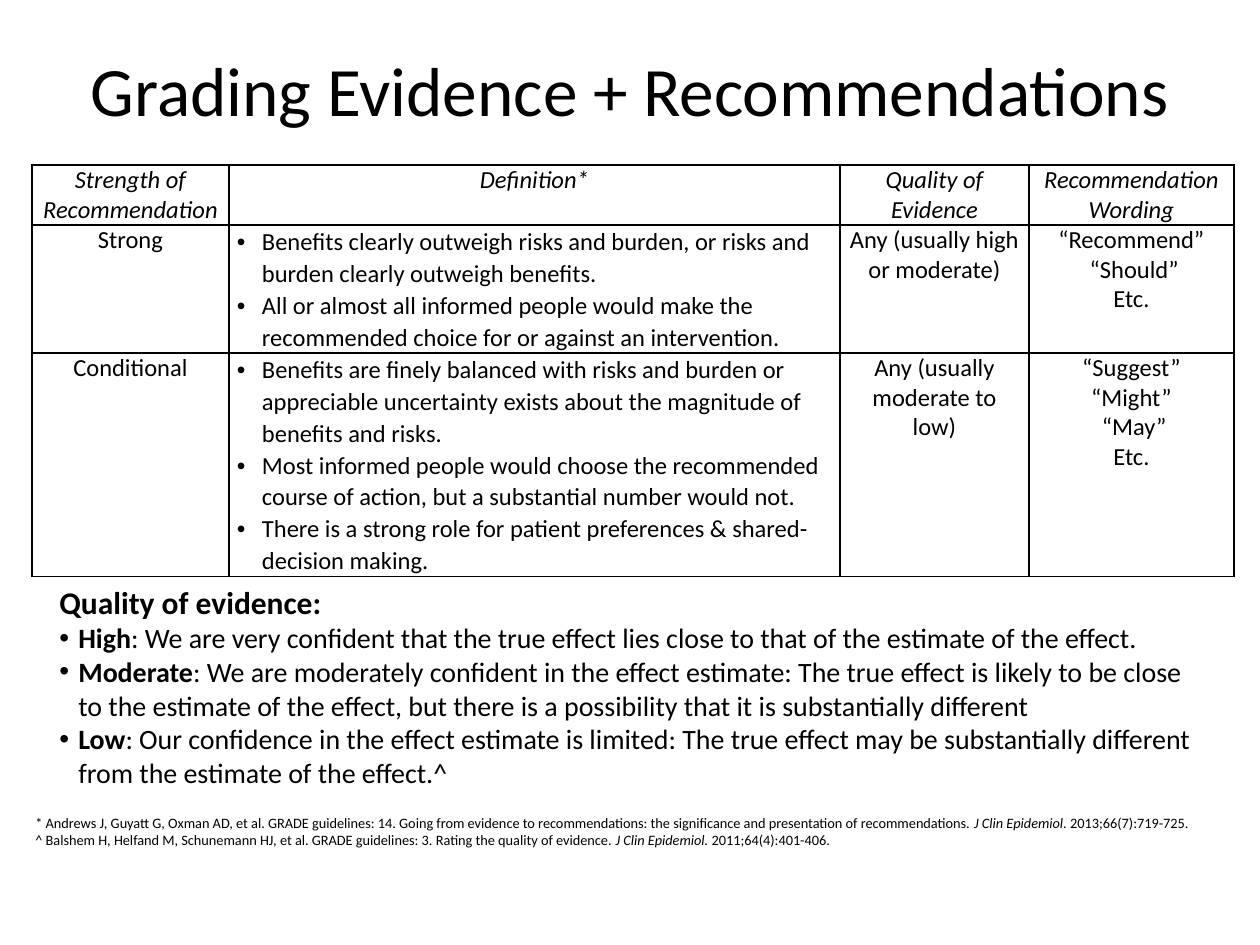
from pptx import Presentation
from pptx.dml.color import RGBColor
from pptx.enum.text import MSO_ANCHOR, MSO_AUTO_SIZE, PP_ALIGN
from pptx.oxml import parse_xml
from pptx.oxml.ns import nsdecls
from pptx.util import Emu, Pt

COLORS = {"text": "000000", "border": "000000", "page": "FFFFFF"}
FONT = "Calibri"
PX_PER_INCH = 126


def px(length):
    return Emu(round(length * 914400 / PX_PER_INCH))


class SlideBuilder:
    def __init__(self, deck):
        self.page = deck.slides.add_slide(deck.slide_layouts[5])
        fill = self.page.background.fill
        fill.solid()
        fill.fore_color.rgb = RGBColor.from_string(COLORS["page"])

    def style(self, span, size, mark=""):
        font = span.font
        font.name, font.size = FONT, Pt(size)
        font.bold, font.italic = mark == "b", mark == "i"
        font.color.rgb = RGBColor.from_string(COLORS["text"])

    def bullet(self, para, indent):
        properties = para._p.get_or_add_pPr()
        properties.set("marL", str(px(indent)))
        properties.set("indent", str(-px(indent)))
        properties.append(parse_xml(f'<a:buFont {nsdecls("a")} typeface="Arial"/>'))
        properties.append(parse_xml(f'<a:buChar {nsdecls("a")} char="•"/>'))

    def title(self, text, left, top, width, height):
        box = self.page.shapes.title
        box.left, box.top, box.width, box.height = map(px, (left, top, width, height))
        frame = box.text_frame
        frame.text = text
        frame.auto_size = MSO_AUTO_SIZE.NONE
        frame.vertical_anchor = MSO_ANCHOR.TOP
        frame.margin_top = px(9)
        para = frame.paragraphs[0]
        para.alignment = PP_ALIGN.CENTER
        self.style(para.runs[0], 39.6)

    def text(self, paragraphs, left, top, width, height):
        """Each paragraph is (size, bullet indent, [(text, mark), ...])."""
        box = self.page.shapes.add_textbox(*map(px, (left, top, width, height)))
        frame = box.text_frame
        frame.word_wrap = True
        frame.auto_size = MSO_AUTO_SIZE.SHAPE_TO_FIT_TEXT
        for index, (size, indent, spans) in enumerate(paragraphs):
            para = frame.add_paragraph() if index else frame.paragraphs[0]
            if indent:
                self.bullet(para, indent)
            for words, mark in spans:
                span = para.add_run()
                span.text = words
                self.style(span, size, mark)

    def borders(self, cell):
        properties = cell._tc.get_or_add_tcPr()
        for index, side in enumerate(("lnL", "lnR", "lnT", "lnB")):
            properties.insert(index, parse_xml(
                f'<a:{side} {nsdecls("a")} w="{Pt(1)}"><a:solidFill>'
                f'<a:srgbClr val="{COLORS["border"]}"/></a:solidFill></a:{side}>'))

    def cell(self, cell, lines, mark="", bulleted=False):
        cell.fill.background()
        cell.margin_left = cell.margin_right = px(8)
        cell.margin_top = cell.margin_bottom = 0
        cell.text_frame.text = "\n".join(lines)
        for para in cell.text_frame.paragraphs:
            if bulleted:
                para.line_spacing = 1.07
                self.bullet(para, 25)
            else:
                para.alignment = PP_ALIGN.CENTER
            self.style(para.runs[0], 14, mark)
        self.borders(cell)

    def table(self, rows, left, top, widths, heights, bullet_column):
        frame = self.page.shapes.add_table(
            len(rows), len(widths), *map(px, (left, top, sum(widths), sum(heights))))
        table = frame.table
        table.horz_banding = table.first_row = False
        for column, width in zip(table.columns, widths):
            column.width = px(width)
        for row, height in zip(table.rows, heights):
            row.height = px(height)
        for r, row in enumerate(rows):
            for c, lines in enumerate(row):
                self.cell(table.cell(r, c), lines, "" if r else "i",
                          r > 0 and c == bullet_column)


TABLE_ROWS = [
    [["Strength of Recommendation"], ["Definition*"],
     ["Quality of Evidence"], ["Recommendation Wording"]],
    [["Strong"],
     ["Benefits clearly outweigh risks and burden, or risks and burden clearly "
      "outweigh benefits.",
      "All or almost all informed people would make the recommended choice for or "
      "against an intervention."],
     ["Any (usually high or moderate)"],
     ["“Recommend”", " “Should”", "Etc."]],
    [["Conditional"],
     ["Benefits are finely balanced with risks and burden or appreciable uncertainty "
      "exists about the magnitude of benefits and risks.",
      "Most informed people would choose the recommended course of action, but a "
      "substantial number would not.",
      "There is a strong role for patient preferences & shared-decision making."],
     ["Any (usually moderate to low)"],
     ["“Suggest”", "“Might”", " “May”", "Etc."]],
]

QUALITY_LEVELS = [
    ("High", ": We are very confident that the true effect lies close to that of the "
     "estimate of the effect."),
    ("Moderate", ": We are moderately confident in the effect estimate: The true effect "
     "is likely to be close to the estimate of the effect, but there is a possibility "
     "that it is substantially different"),
    ("Low", ": Our confidence in the effect estimate is limited: The true effect may be "
     "substantially different from the estimate of the effect.^"),
]

REFERENCES = [
    ("* Andrews J, Guyatt G, Oxman AD, et al. GRADE guidelines: 14. Going from evidence "
     "to recommendations: the significance and presentation of recommendations. ",
     "2013;66(7):719-725."),
    ("^ Balshem H, Helfand M, Schunemann HJ, et al. GRADE guidelines: 3. Rating the "
     "quality of evidence. ", "2011;64(4):401-406."),
]


def main():
    deck = Presentation()
    deck.slide_width, deck.slide_height = px(1260), px(945)
    builder = SlideBuilder(deck)

    # Title and grading table
    builder.title("Grading Evidence + Recommendations", 63, 38, 1134, 157)
    builder.table(TABLE_ROWS, 32, 165, widths=[197, 611, 189, 205],
                  heights=[60, 128, 223], bullet_column=1)

    # Quality levels
    heading = (18, 0, [("Quality of evidence:", "b")])
    levels = [(16, 19, [(level, "b"), (meaning, "")]) for level, meaning in QUALITY_LEVELS]
    builder.text([heading] + levels, 47, 577, 1167, 220)

    # References
    notes = [(8.2, 0, [(article, ""), ("J Clin Epidemiol. ", "i"), (issue, "")])
             for article, issue in REFERENCES]
    builder.text(notes, 23, 808, 1212, 48)

    deck.save("out.pptx")


if __name__ == "__main__":
    main()
